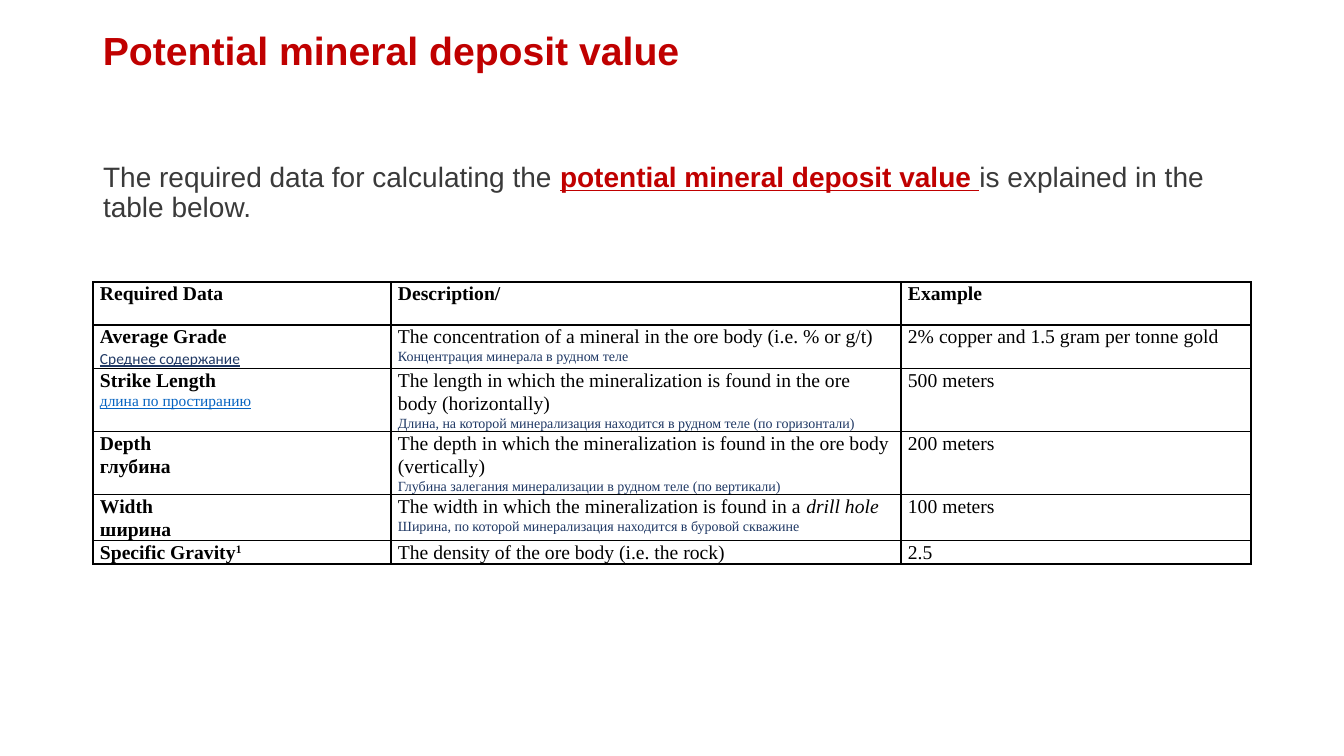
from lxml.etree import SubElement
from pptx import Presentation
from pptx.dml.color import RGBColor
from pptx.enum.text import MSO_ANCHOR, MSO_AUTO_SIZE, PP_ALIGN
from pptx.oxml import parse_xml
from pptx.oxml.ns import nsdecls, qn
from pptx.util import Pt

# Content: (text, style) runs, grouped in paragraphs
HEADING = ("Potential mineral deposit value", "heading")
INTRO = [
    ("The required data for calculating the ", "intro"),
    ("potential mineral deposit value ", "key term"),
    ("is explained in the table below.", "intro"),
]
ROWS = [
    ([[("Required Data", "label")]],
     [[("Description/", "label")]],
     [[("Example", "label")]]),
    ([[("Average Grade", "label")], [("Среднее содержание", "grade term")]],
     [[("The concentration of a mineral in the ore body (i.e. % or g/t)", "text")],
      [("Концентрация минерала в рудном теле", "translation")]],
     [[("2% copper and 1.5 gram per tonne gold", "text")]]),
    ([[("Strike Length", "label")], [("длина по простиранию", "strike term")]],
     [[("The length in which the mineralization is found in the ore body (horizontally)", "text")],
      [("Длина, на которой минерализация находится в рудном теле (по горизонтали)", "translation")]],
     [[("500 meters", "text")]]),
    ([[("Depth", "label")], [("глубина", "label")]],
     [[("The depth in which the mineralization is found in the ore body (vertically)", "text")],
      [("Глубина залегания минерализации в рудном теле (по вертикали)", "translation")]],
     [[("200 meters", "text")]]),
    ([[("Width", "label")], [("ширина", "label")]],
     [[("The width in which the mineralization is found in a ", "text"), ("drill hole", "italic")],
      [("Ширина, по которой минерализация находится в буровой скважине", "translation")]],
     [[("100 meters", "text")]]),
    ([[("Specific Gravity", "label"), ("1", "superscript")]],
     [[("The density of the ore body (i.e. the rock)", "text")]],
     [[("2.5", "text")]]),
]

# Styles: font, size, colour, flags (b, i, u, ^ for superscript)
SERIF = "Times New Roman"
STYLES = {
    "heading": ("Arial", 28, "C00000", "b"),
    "intro": ("Arial", 20, "3A3A3A", ""),
    "key term": ("Arial", 20, "C00000", "bu"),
    "label": (SERIF, 14, "000000", "b"),
    "superscript": (SERIF, 14, "000000", "b^"),
    "text": (SERIF, 14, "000000", ""),
    "italic": (SERIF, 14, "000000", "i"),
    "translation": (SERIF, 10, "1F3864", ""),
    "grade term": ("Calibri", 11, "1F3864", "u"),
    "strike term": (SERIF, 11, "0563C1", "u"),
}

# Layout in px
SLIDE_SIZE = (1344, 756)
LEFT = 93
COLUMN_WIDTHS = [298, 510, 350]
ROW_HEIGHTS = [43, 43, 63, 63, 46, 23]
BORDER_COLOR = "000000"


def px(length):
    return round(length * 914400 / 100.8)


def color(hex_string):
    return RGBColor.from_string(hex_string)


def add_runs(paragraph, runs):
    for text, style in runs:
        name, size, hex_string, flags = STYLES[style]
        run = paragraph.add_run()
        run.text = text
        font = run.font
        font.name, font.size = name, Pt(size)
        font.color.rgb = color(hex_string)
        font.bold, font.italic, font.underline = (flag in flags for flag in "biu")
        if "^" in flags:
            run._r.get_or_add_rPr().set("baseline", "30000")


def add_borders(cell):
    properties = cell._tc.get_or_add_tcPr()
    for index, side in enumerate(("lnL", "lnR", "lnT", "lnB")):
        line = parse_xml(f'<a:{side} {nsdecls("a")} w="{Pt(1)}"/>')
        fill = SubElement(line, qn("a:solidFill"))
        SubElement(fill, qn("a:srgbClr"), val=BORDER_COLOR)
        properties.insert(index, line)


def fill_cell(cell, paragraphs):
    cell.margin_left = cell.margin_right = px(7)
    cell.margin_top = cell.margin_bottom = 0
    cell.fill.background()
    add_borders(cell)
    frame = cell.text_frame
    for index, runs in enumerate(paragraphs):
        paragraph = frame.add_paragraph() if index else frame.paragraphs[0]
        paragraph.line_spacing = 1.07
        add_runs(paragraph, runs)


def main():
    prs = Presentation()
    prs.slide_width, prs.slide_height = map(px, SLIDE_SIZE)
    slide = prs.slides.add_slide(prs.slide_layouts[5])

    # Introduction in the title placeholder
    intro = slide.shapes.title
    intro.left, intro.top, intro.width, intro.height = map(px, (LEFT, 136, 1159, 146))
    frame = intro.text_frame
    frame.word_wrap = True
    frame.auto_size = MSO_AUTO_SIZE.NONE
    frame.vertical_anchor = MSO_ANCHOR.MIDDLE
    frame.margin_bottom = px(36)
    paragraph = frame.paragraphs[0]
    paragraph.alignment = PP_ALIGN.LEFT
    paragraph.line_spacing = 0.9
    add_runs(paragraph, INTRO)

    # Data table
    table = slide.shapes.add_table(
        len(ROWS), len(COLUMN_WIDTHS), px(LEFT), px(282),
        px(sum(COLUMN_WIDTHS)), px(sum(ROW_HEIGHTS))).table
    table.first_row = table.horz_banding = False
    for column, width in zip(table.columns, COLUMN_WIDTHS):
        column.width = px(width)
    for row, height, contents in zip(table.rows, ROW_HEIGHTS, ROWS):
        row.height = px(height)
        for cell, paragraphs in zip(row.cells, contents):
            fill_cell(cell, paragraphs)

    # Heading
    heading = slide.shapes.add_textbox(*map(px, (LEFT, 21, 1042, 57))).text_frame
    heading.word_wrap = True
    heading.auto_size = MSO_AUTO_SIZE.SHAPE_TO_FIT_TEXT
    add_runs(heading.paragraphs[0], [HEADING])

    prs.save("out.pptx")


if __name__ == "__main__":
    main()
